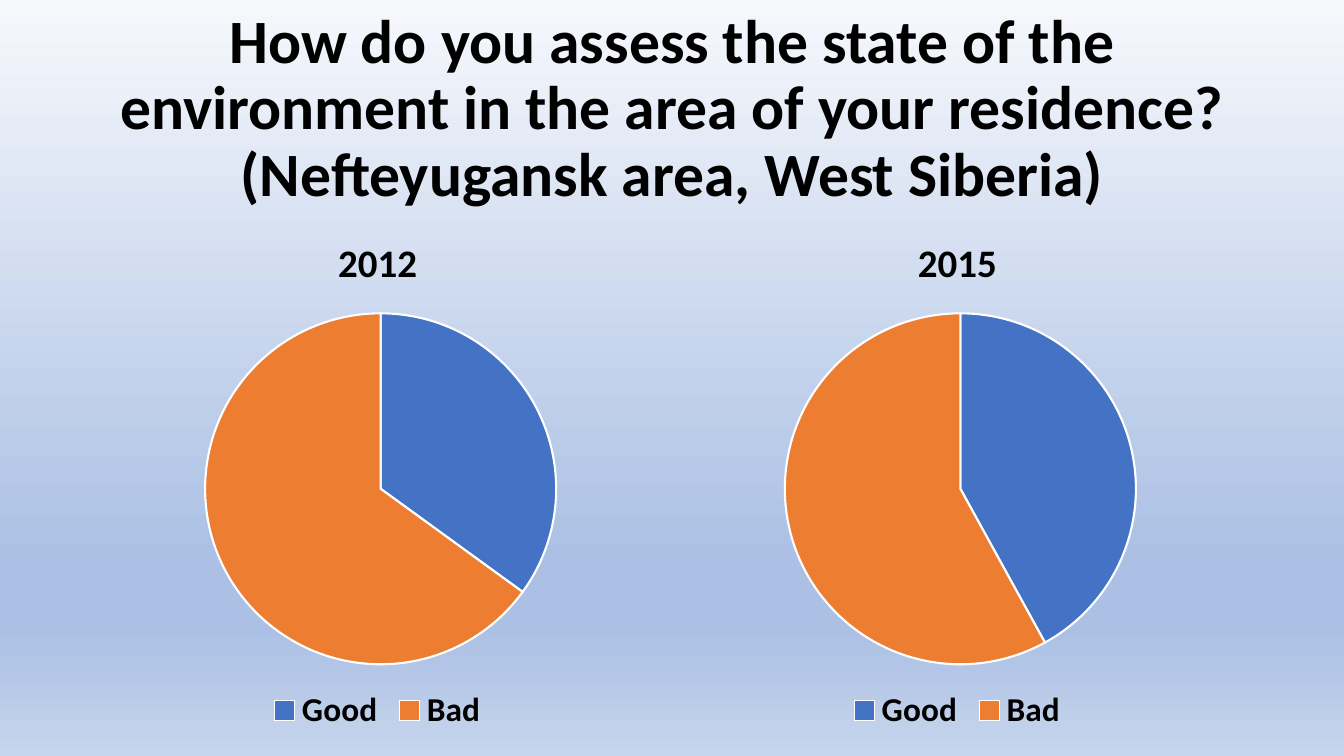
from copy import deepcopy

from lxml import etree
from pptx import Presentation
from pptx.chart.data import CategoryChartData
from pptx.dml.color import RGBColor
from pptx.enum.chart import XL_CHART_TYPE, XL_LEGEND_POSITION
from pptx.enum.text import MSO_ANCHOR, PP_ALIGN
from pptx.oxml.ns import qn
from pptx.util import Inches, Pt

PIE = XL_CHART_TYPE.PIE
BOTTOM = XL_LEGEND_POSITION.BOTTOM
MIDDLE = MSO_ANCHOR.MIDDLE
CENTER = PP_ALIGN.CENTER

STOPS = [(0, "F6F8FC"), (0.74, "ABC0E4"), (0.83, "ABC0E4"), (1, "C7D5ED")]
SLICES = ["4472C4", "ED7D31"]
CHARTS = [("2012", 0.69, (35, 65)), ("2015", 6.44, (42, 58))]
PLOT = {"x": 0.22, "y": 0.19, "w": 0.57, "h": 0.67}


def color(code):
    return RGBColor.from_string(code)


def style(font, size, bold=True):
    font.name = "Calibri"
    font.size = Pt(size)
    font.bold = bold
    font.color.rgb = color("000000")


deck = Presentation()
deck.slide_width = Inches(13.33)
deck.slide_height = Inches(7.5)
slide = deck.slides.add_slide(deck.slide_layouts[6])

# Background gradient, top to bottom
back = slide.background.fill
back.gradient()
back.gradient_angle = 270
stops = next(slide.element.iter(qn("a:gsLst")))
while len(stops) < len(STOPS):
    stops.append(deepcopy(stops[0]))
for stop, (place, code) in zip(back.gradient_stops, STOPS):
    stop.position = place
    stop.color.rgb = color(code)

# Title
box = slide.shapes.add_textbox(Inches(0.92), Inches(0.4), Inches(11.5), Inches(1.38))
frame = box.text_frame
frame.word_wrap = True
frame.vertical_anchor = MIDDLE
title = frame.paragraphs[0]
title.text = "How do you assess the state of the environment in the area of your residence?"
title.add_line_break()
title.add_run().text = "(Nefteyugansk area, West Siberia)"
title.alignment = CENTER
title.line_spacing = 0.9
style(title.font, 44)

# One pie per survey year
for year, left, shares in CHARTS:
    data = CategoryChartData()
    data.categories = ["Good", "Bad"]
    data.add_series("Series 1", shares)
    chart = slide.shapes.add_chart(
        PIE, Inches(left), Inches(2.12), Inches(6.11), Inches(5.2), data
    ).chart
    style(chart.font, 10, False)

    chart.has_title = True
    head = chart.chart_title.text_frame.paragraphs[0]
    head.text = year
    style(head.font, 27.8)
    chart.chart_title.include_in_layout = False

    chart.has_legend = True
    chart.legend.position = BOTTOM
    chart.legend.include_in_layout = False
    style(chart.legend.font, 23.8)

    pie = chart.plots[0]
    pie.vary_by_categories = True
    for index, code in enumerate(SLICES):
        slice_format = pie.series[0].points[index].format
        slice_format.fill.solid()
        slice_format.fill.fore_color.rgb = color(code)
        slice_format.line.color.rgb = color("FFFFFF")
        slice_format.line.width = Pt(1.5)

    # Fixed place of the pie inside the chart
    area = next(chart.element.iter(qn("c:plotArea")))
    for old in area.findall(qn("c:layout")):
        area.remove(old)
    layout = etree.Element(qn("c:layout"))
    area.insert(0, layout)
    manual = etree.SubElement(layout, qn("c:manualLayout"))
    rules = {"layoutTarget": "inner", "xMode": "edge", "yMode": "edge", **PLOT}
    for tag, value in rules.items():
        etree.SubElement(manual, qn(f"c:{tag}"), val=str(value))

deck.save("out.pptx")
